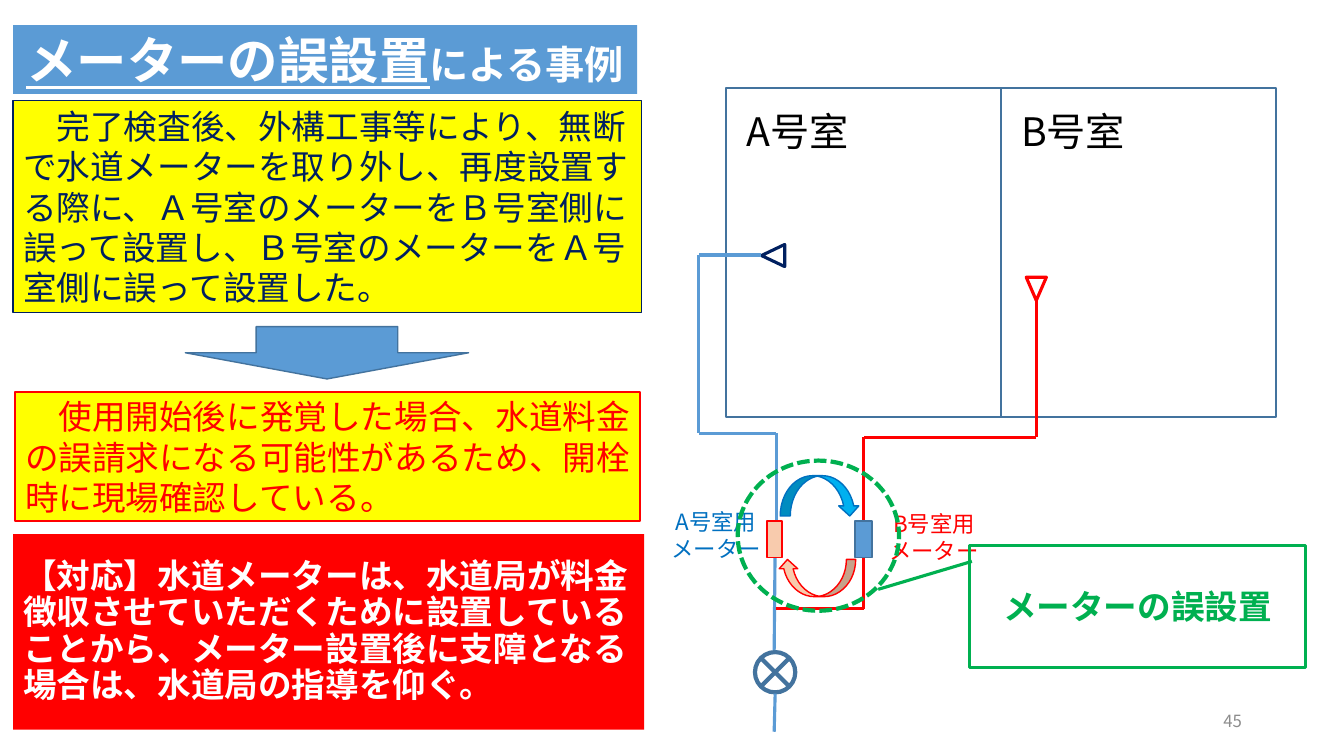
from itertools import pairwise

from lxml.etree import SubElement
from pptx import Presentation
from pptx.dml.color import RGBColor
from pptx.enum.dml import MSO_LINE
from pptx.enum.shapes import MSO_CONNECTOR, MSO_SHAPE
from pptx.enum.text import MSO_ANCHOR, PP_ALIGN
from pptx.oxml.ns import qn
from pptx.util import Pt

FONT = "Noto Sans CJK JP"
COLORS = {
    "blue": "5B9BD5", "edge": "43739E", "navy": "002060", "label": "0070C0",
    "sky": "00B0F0", "red": "FF0000", "peach": "F8CBAD", "yellow": "FFFF00",
    "green": "00B050", "white": "FFFFFF", "black": "000000", "gray": "8C8C8C",
}


def rgb(name):
    return RGBColor.from_string(COLORS[name])


def write(sp, *paragraphs, size=24, color="black", bold=False, align=PP_ALIGN.LEFT, spacing=None):
    """Each paragraph is a string or a list of (text, size, underline) runs."""
    tf = sp.text_frame
    tf.word_wrap = True
    tf.vertical_anchor = MSO_ANCHOR.MIDDLE
    for i, runs in enumerate(paragraphs):
        p = tf.add_paragraph() if i else tf.paragraphs[0]
        p.alignment = align
        if spacing:
            p.line_spacing = spacing
        if isinstance(runs, str):
            runs = [(runs, size, False)]
        for text, run_size, underline in runs:
            r = p.add_run()
            r.text = text
            r.font.size = Pt(run_size)
            r.font.bold = bold
            r.font.underline = underline
            r.font.color.rgb = rgb(color)
            r.font.name = FONT
            SubElement(r._r.get_or_add_rPr(), qn("a:ea"), typeface=FONT)


def shape(s, kind, x, y, w, h, fill=None, line=None, width=1, rotation=0):
    sp = s.shapes.add_shape(kind, Pt(x), Pt(y), Pt(w), Pt(h))
    sp.shadow.inherit = False
    sp.rotation = rotation
    if fill:
        sp.fill.solid()
        sp.fill.fore_color.rgb = rgb(fill)
    else:
        sp.fill.background()
    if line:
        sp.line.color.rgb = rgb(line)
        sp.line.width = Pt(width)
    else:
        sp.line.fill.background()
    return sp


def pipe(s, x, y, points, color):
    """Join the points, given relative to x, y, with straight pipe sections."""
    for (x1, y1), (x2, y2) in pairwise(points):
        c = s.shapes.add_connector(MSO_CONNECTOR.STRAIGHT, Pt(x + x1), Pt(y + y1), Pt(x + x2), Pt(y + y2))
        c.line.color.rgb = rgb(color)
        c.line.width = Pt(2.25)
        SubElement(c._element.spPr, qn("a:effectLst"))


def explanation(s, x, y, w):
    rect = MSO_SHAPE.RECTANGLE
    title = shape(s, rect, x, y, w - 5, 49, fill="blue")
    write(title, [("メーターの誤設置", 36, True), ("による事例", 28, False)],
          color="white", bold=True, align=PP_ALIGN.CENTER)
    cause = shape(s, rect, x, y + 54, w - 2, 151.2, fill="yellow", line="navy")
    write(cause, "\u3000完了検査後、外構工事等により、無断で水道メーターを取り外し、再度設置する際に、"
          "Ａ号室のメーターをＢ号室側に誤って設置し、Ｂ号室のメーターをＡ号室側に誤って設置した。",
          color="navy")
    shape(s, MSO_SHAPE.DOWN_ARROW, x + 123, y + 215.3, 202.3, 37.4, fill="blue", line="edge")
    result = shape(s, rect, x + 1.4, y + 262.1, w - 4.3, 92.2, fill="yellow", line="red")
    write(result, "\u3000使用開始後に発覚した場合、水道料金の誤請求になる可能性があるため、"
          "開栓時に現場確認している。", color="red")
    response = shape(s, rect, x, y + 363.6, w, 139.7, fill="red")
    write(response, "【対応】水道メーターは、水道局が料金徴収させていただくために設置していることから、"
          "メーター設置後に支障となる場合は、水道局の指導を仰ぐ。",
          color="white", bold=True, spacing=0.9)


def rooms(s, x, y, w, h):
    names = ["A号室", "B号室"]
    room_w = w / len(names)
    for i, name in enumerate(names):
        left = x + i * room_w
        label = shape(s, MSO_SHAPE.RECTANGLE, left - 6.5, y + 1.4, 116, 58.3, fill="white")
        write(label, name, size=28, align=PP_ALIGN.CENTER)
    for i in range(len(names)):
        shape(s, MSO_SHAPE.RECTANGLE, x + i * room_w, y, room_w, h, line="edge", width=1.5)


def piping(s, x, y):
    for name, dx, dy, w, color in [("B号室用", 148.1, 180.2, 116, "red"),
                                   ("A号室用", 0.5, 178.8, 100, "label")]:
        label = shape(s, MSO_SHAPE.RECTANGLE, x + dx, y + dy, w, 58.3, fill="white")
        write(label, name, "メーター", size=16, color=color, align=PP_ALIGN.CENTER)

    tap = MSO_SHAPE.ISOSCELES_TRIANGLE
    shape(s, tap, x + 272, y + 24, 14.4, 16.6, line="red", width=2.25, rotation=180)
    shape(s, tap, x + 83.3, y + 0.2, 15.8, 16.6, line="navy", width=2.25, rotation=270)
    shape(s, MSO_SHAPE.FLOWCHART_SUMMING_JUNCTION, x + 78.3, y + 291.8, 28.8, 28.8, line="edge", width=3)

    a_x, b_x = 93.4, 156
    for color, points in [
        ("blue", [(82.6, 8.2), (38, 8.2), (38, 135.6), (a_x, 135.6), (a_x, 199)]),
        ("blue", [(92.7, 214), (92, 290.4)]),
        ("blue", [(92.7, 321.4), (92, 348.7)]),
        ("red", [(279.2, 41.3), (279.2, 138.5), (b_x, 138.5), (b_x, 202.6)]),
        ("red", [(b_x, 214), (b_x, 260.9), (a_x, 260.9)]),
    ]:
        pipe(s, x, y, points, color)

    meter, swap = MSO_SHAPE.RECTANGLE, MSO_SHAPE.CURVED_DOWN_ARROW
    shape(s, meter, x + 86.9, y + 198.2, 10.8, 25.9, fill="peach", line="red")
    shape(s, swap, x + 96.3, y + 165.8, 56.9, 28.8, fill="sky", line="label")
    shape(s, swap, x + 94.8, y + 225.6, 55.4, 26.6, fill="peach", line="red", rotation=180)
    shape(s, meter, x + 149.6, y + 198.2, 12.2, 25.9, fill="blue", line="edge")

    callout = shape(s, MSO_SHAPE.LINE_CALLOUT_1, x + 231.6, y + 215.5, 239.8, 87.1, line="green", width=2.25)
    for i, value in enumerate([0.132, 0.007, 0.361, -0.272]):
        callout.adjustments[i] = value
    write(callout, "メーターの誤設置", color="green", bold=True, align=PP_ALIGN.CENTER)
    ring = shape(s, MSO_SHAPE.OVAL, x + 66, y + 155, 115.2, 107.3, line="green", width=3)
    ring.line.dash_style = MSO_LINE.SQUARE_DOT


def page_number(s, x, y, w, h):
    box = s.shapes.add_textbox(Pt(x), Pt(y), Pt(w), Pt(h))
    write(box, "45", size=12, color="gray", align=PP_ALIGN.RIGHT)


def main():
    prs = Presentation()
    prs.slide_width, prs.slide_height = Pt(960), Pt(540)
    s = prs.slides.add_slide(prs.slide_layouts[6])
    explanation(s, 9.4, 18, 450.7)
    rooms(s, 518.4, 62.6, 393.2, 235.4)
    piping(s, 461, 174)
    page_number(s, 678.2, 500.4, 216, 28.8)
    prs.save("out.pptx")


if __name__ == "__main__":
    main()
